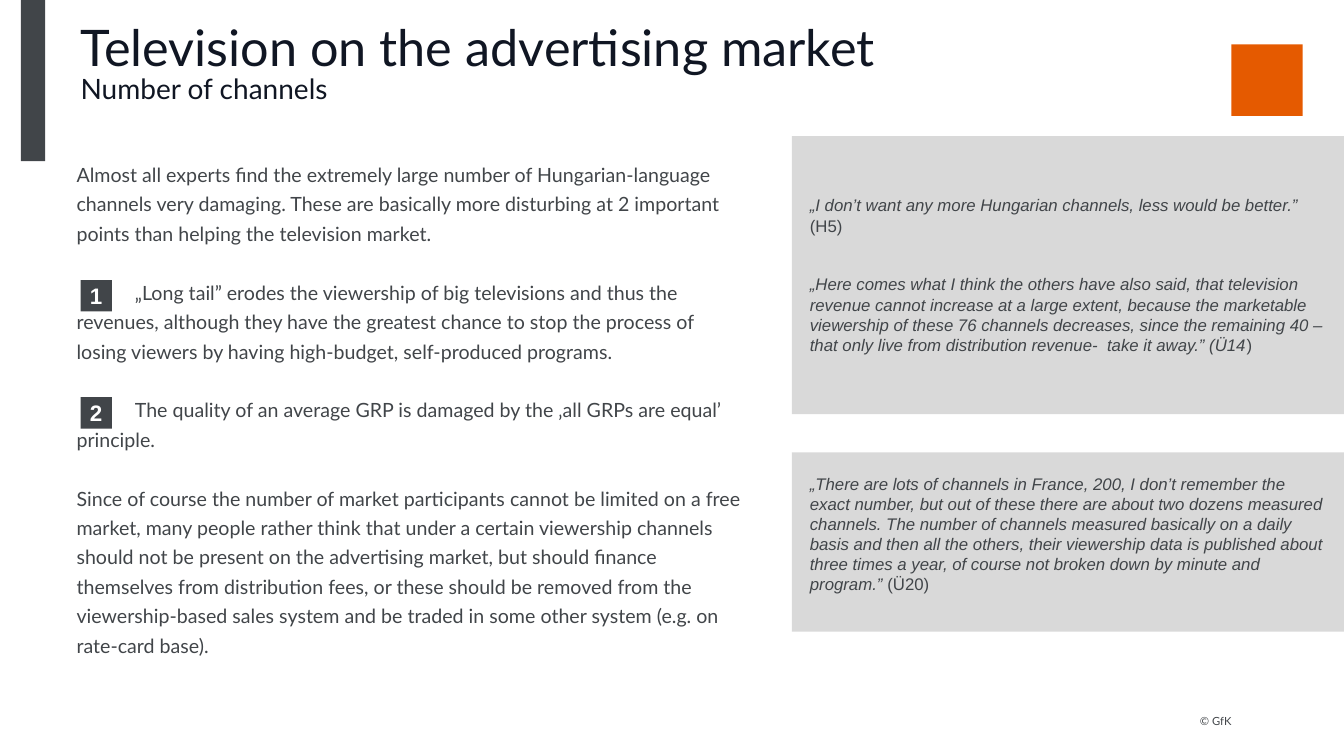
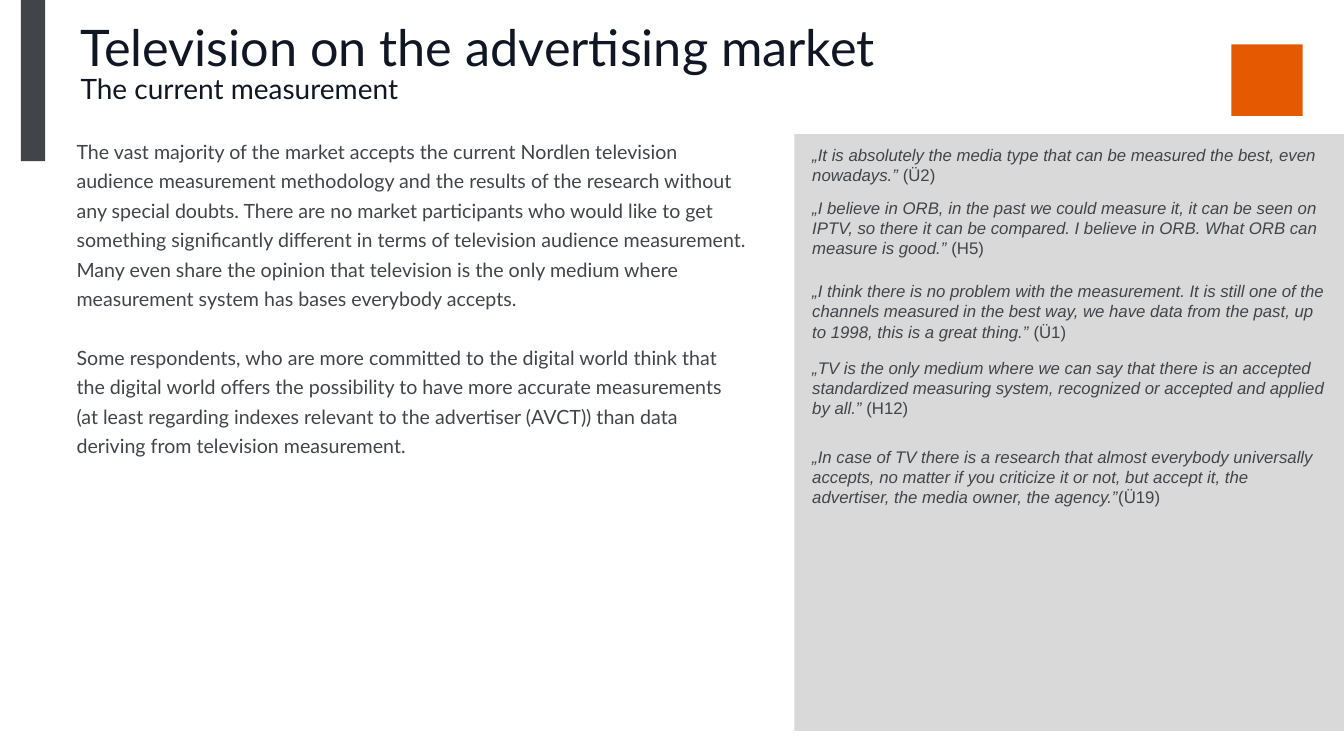
import pptx
import pptx.dml.color
import pptx.enum.shapes
import pptx.enum.text
import pptx.oxml
import pptx.oxml.ns
import pptx.util
from dataclasses import dataclass
from typing import Optional

Cm = pptx.util.Cm
Pt = pptx.util.Pt
Align = pptx.enum.text.PP_ALIGN
Anchor = pptx.enum.text.MSO_ANCHOR


# Theme: colours, fonts and type sizes
@dataclass(frozen=True)
class Theme:
    dark: str = "414549"
    ink: str = "101623"
    panel: str = "D9D9D9"
    brand: str = "E55A00"
    white: str = "FFFFFF"
    sans: str = "Lato"
    plain: str = "Arial"
    head: float = 36
    sub: float = 20
    body: float = 14
    quote: float = 12
    badge: float = 16
    foot: float = 8
    lead: float = 1.25
    gap: float = 21


@dataclass(frozen=True)
class Box:
    left: float
    top: float
    width: float
    height: float


@dataclass(frozen=True)
class Quote:
    top: float
    words: str
    source: str


@dataclass(frozen=True)
class Panel:
    top: float
    height: float
    quotes: tuple[Quote, ...]


@dataclass(frozen=True)
class Page:
    sub: str
    text: Box
    paras: tuple[str, ...]
    side: float
    panels: tuple[Panel, ...]
    badges: tuple[float, ...] = ()
    foot: Optional[str] = None


THEME = Theme()
WIDE, HIGH = 33.87, 19.05
TITLE = "Television on the advertising market"

PAGES = (
    Page(
        "Number of channels",
        Box(1.93, 3.96, 16.92, 13.6),
        (
            "Almost all experts find the extremely large number of Hungarian-language channels very "
            "damaging. These are basically more disturbing at 2 important points than helping the "
            "television market.",
            "\t„Long tail” erodes the viewership of big televisions and thus the revenues, although "
            "they have the greatest chance to stop the process of losing viewers by having "
            "high-budget, self-produced programs.",
            "\tThe quality of an average GRP is damaged by the ‚all GRPs are equal’ principle.",
            "Since of course the number of market participants cannot be limited on a free market, "
            "many people rather think that under a certain viewership channels should not be present "
            "on the advertising market, but should finance themselves from distribution fees, or "
            "these should be removed from the viewership-based sales system and be traded in some "
            "other system (e.g. on rate-card base).",
        ),
        19.96,
        (
            Panel(3.43, 7.01, (
                Quote(4.72, "„I don’t want any more Hungarian channels, less would be better.” ",
                      "(H5)"),
                Quote(6.71, "„Here comes what I think the others have also said, that television "
                      "revenue cannot increase at a large extent, because the marketable viewership "
                      "of these 76 channels decreases, since the remaining 40 – that only live from "
                      "distribution revenue-  take it away.” (Ü14", ")"),
            )),
            Panel(11.4, 4.52, (
                Quote(11.73, "„There are lots of channels in France, 200, I don’t remember the exact "
                      "number, but out of these there are about two dozens measured channels. The "
                      "number of channels measured basically on a daily basis and then all the "
                      "others, their viewership data is published about three times a year, of "
                      "course not broken down by minute and program.” ", "(Ü20)"),
            )),
        ),
        (7.06, 10.01),
        "© GfK",
    ),
    Page(
        "The current measurement",
        Box(1.93, 3.38, 16.92, 8.5),
        (
            "The vast majority of the market accepts the current Nordlen television audience "
            "measurement methodology and the results of the research without any special doubts. "
            "There are no market participants who would like to get something significantly "
            "different in terms of television audience measurement.\v"
            "Many even share the opinion that television is the only medium where measurement "
            "system has bases everybody accepts.",
            "Some respondents, who are more committed to the digital world think that the digital "
            "world offers the possibility to have more accurate measurements (at least regarding "
            "indexes relevant to the advertiser (AVCT)) than data deriving from television "
            "measurement.",
        ),
        20.02,
        (
            Panel(3.38, 15.04, (
                Quote(3.45, "„It is absolutely the media type that can be measured the best, even "
                      "nowadays.” ", "(Ü2)"),
                Quote(4.78, "„I believe in ORB, in the past we could measure it, it can be seen on "
                      "IPTV, so there it can be compared. I believe in ORB. What ORB can measure is "
                      "good.” ", "(H5)"),
                Quote(6.88, "„I think there is no problem with the measurement. It is still one of "
                      "the channels measured in the best way, we have data from the past, up to "
                      "1998, this is a great thing.” ", "(Ü1)"),
                Quote(8.81, "„TV is the only medium where we can say that there is an accepted "
                      "standardized measuring system, recognized or accepted and applied by all.” ",
                      "(H12)"),
                Quote(11.05, "„In case of TV there is a research that almost everybody universally "
                      "accepts, no matter if you criticize it or not, but accept it, the "
                      "advertiser, the media owner, the agency.”", "(Ü19)"),
            )),
        ),
    ),
)


# Basic parts
def place(box: Box) -> tuple:
    return Cm(box.left), Cm(box.top), Cm(box.width), Cm(box.height)


def style(run, face: str, size: float, tint: str, bold=False, slant=False) -> None:
    font = run.font
    font.name, font.size, font.bold, font.italic = face, Pt(size), bold, slant
    font.color.rgb = pptx.dml.color.RGBColor.from_string(tint)


def clear(frame, top: float = 0) -> None:
    frame.margin_left = frame.margin_right = frame.margin_bottom = 0
    frame.margin_top = Cm(top)


def block(slide, box: Box, tint: str):
    shape = slide.shapes.add_shape(pptx.enum.shapes.MSO_SHAPE.RECTANGLE, *place(box))
    shape.shadow.inherit = False
    shape.fill.solid()
    shape.fill.fore_color.rgb = pptx.dml.color.RGBColor.from_string(tint)
    shape.line.fill.background()
    return shape


def label(slide, box: Box, text: str, top: float = 0, wrap: bool = True):
    frame = slide.shapes.add_textbox(*place(box)).text_frame
    frame.word_wrap = wrap
    clear(frame, top)
    frame.text = text
    return frame


def stop(para, pos: float) -> None:
    tabs = pptx.oxml.parse_xml(
        f'<a:tabLst {pptx.oxml.ns.nsdecls("a")}><a:tab pos="{Cm(pos)}" algn="l"/></a:tabLst>')
    para._p.get_or_add_pPr().append(tabs)


# Slide parts
def frame_page(slide, page: Page) -> None:
    block(slide, Box(31.03, 1.12, 1.8, 1.8), THEME.brand)
    block(slide, Box(0.53, 0, 0.61, 4.06), THEME.dark)
    para = label(slide, Box(2.03, 0.64, 21.46, 1.37), f"{TITLE}\v{page.sub}").paragraphs[0]
    para.line_spacing = 0.85
    for run, size in zip(para.runs, (THEME.head, THEME.sub)):
        style(run, THEME.sans, size, THEME.ink)
    if page.foot:
        note = label(slide, Box(29.64, 17.96, 1.4, 0.38), page.foot, wrap=False)
        note.vertical_anchor = Anchor.BOTTOM
        para = note.paragraphs[0]
        para.alignment, para.line_spacing = Align.RIGHT, THEME.lead
        style(para.runs[0], THEME.sans, THEME.foot, THEME.dark)


def draw_text(slide, page: Page) -> None:
    frame = label(slide, page.text, "\n".join(page.paras))
    for spot, para in enumerate(frame.paragraphs):
        if page.paras[spot].startswith("\t"):
            stop(para, 1.47)
        para.line_spacing = THEME.lead
        if spot:
            para.space_before = Pt(THEME.gap)
        for run in para.runs:
            style(run, THEME.sans, THEME.body, THEME.dark)


def draw_badge(slide, top: float, mark: int) -> None:
    shape = block(slide, Box(2.03, top, 0.79, 0.79), THEME.dark)
    frame = shape.text_frame
    clear(frame)
    frame.vertical_anchor = Anchor.MIDDLE
    frame.text = str(mark)
    para = frame.paragraphs[0]
    para.alignment = Align.CENTER
    style(para.runs[0], THEME.plain, THEME.badge, THEME.white, bold=True)


def draw_panel(slide, left: float, panel: Panel) -> None:
    block(slide, Box(left, panel.top, WIDE - left, panel.height), THEME.panel)
    for quote in panel.quotes:
        para = label(slide, Box(left + 0.45, quote.top, 13, 1.93), quote.words, 0.2).paragraphs[0]
        para.add_run().text = quote.source
        for run, slant in zip(para.runs, (True, False)):
            style(run, THEME.plain, THEME.quote, THEME.dark, slant=slant)


def main() -> None:
    deck = pptx.Presentation()
    deck.slide_width, deck.slide_height = Cm(WIDE), Cm(HIGH)
    for page in PAGES:
        slide = deck.slides.add_slide(deck.slide_layouts[6])
        frame_page(slide, page)
        draw_text(slide, page)
        for mark, top in enumerate(page.badges, 1):
            draw_badge(slide, top, mark)
        for panel in page.panels:
            draw_panel(slide, page.side, panel)
    deck.save("out.pptx")


if __name__ == "__main__":
    main()
